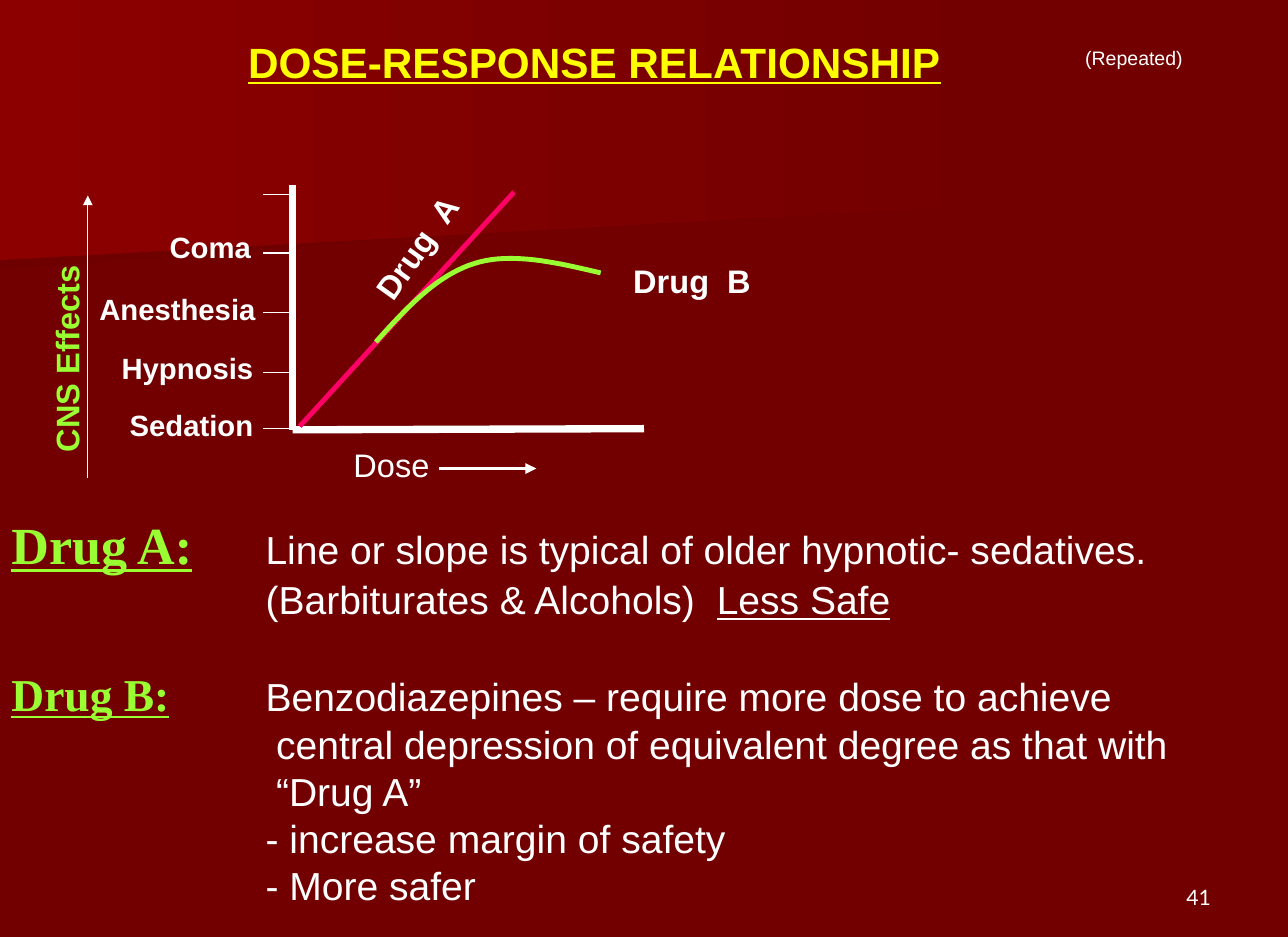
from dataclasses import dataclass

from lxml.etree import SubElement
from pptx import Presentation
from pptx.dml.color import RGBColor as Rgb
from pptx.enum.shapes import MSO_CONNECTOR as Connector
from pptx.enum.text import MSO_ANCHOR as Anchor, PP_ALIGN as Align
from pptx.oxml.ns import qn
from pptx.util import Emu, Pt

PX = 9144  # EMU per px, 100 px to the inch


@dataclass(frozen=True)
class Theme:
    background: str = "720000"
    glow: str = "8C0000"
    shade: str = "6F0000"
    white: str = "FFFFFF"
    yellow: str = "FFFF00"
    green: str = "99FF33"
    pink: str = "FF0066"
    sans: str = "Arial"
    serif: str = "Times New Roman"
    number_font: str = "Lato"
    title: int = 26
    body: int = 24
    label: int = 20
    level: int = 18
    number: int = 13
    remark: int = 12


THEME = Theme()


def px(value):
    return Emu(round(value * PX))


def set_font(font, size, color=THEME.white, bold=False, underline=False, name=THEME.sans):
    font.name, font.size = name, Pt(size)
    font.bold, font.underline = bold, underline
    font.color.rgb = Rgb.from_string(color)


def add_frame(slide, left, top, width, height, wrap=False):
    box = slide.shapes.add_textbox(px(left), px(top), px(width), px(height))
    box.text_frame.word_wrap = wrap
    return box


def add_label(slide, text, box, size, rotation=0, align=Align.LEFT,
              anchor=Anchor.TOP, **style):
    label = add_frame(slide, *box)
    label.rotation = rotation
    label.text_frame.vertical_anchor = anchor
    paragraph = label.text_frame.paragraphs[0]
    paragraph.text, paragraph.alignment = text, align
    set_font(paragraph.font, size, **style)


def add_line(slide, start, end, width, color=THEME.white, arrow=False):
    line = slide.shapes.add_connector(Connector.STRAIGHT, *map(px, start + end))
    line.line.width = Pt(width)
    line.line.color.rgb = Rgb.from_string(color)
    properties = line._element.spPr
    if arrow:
        SubElement(properties.find(qn("a:ln")), qn("a:tailEnd"), type="triangle")
    SubElement(properties, qn("a:effectLst"))


def add_outline(slide, points, close):
    start, *rest = [(px(x), px(y)) for x, y in points]
    builder = slide.shapes.build_freeform(*start)
    builder.add_line_segments(rest, close=close)
    outline = builder.convert_to_shape()
    outline.shadow.inherit = False
    return outline


def add_band(slide, points, color):
    band = add_outline(slide, points, close=True)
    band.line.fill.background()
    band.fill.gradient()
    band.fill.gradient_angle = 0
    for stop, tone in zip(band.fill.gradient_stops, (color, THEME.background)):
        stop.color.rgb = Rgb.from_string(tone)


def bezier(p0, p1, p2, p3, steps=20):
    for t in (step / steps for step in range(steps + 1)):
        yield tuple((1 - t) ** 3 * a + 3 * (1 - t) ** 2 * t * b
                    + 3 * (1 - t) * t ** 2 * c + t ** 3 * d
                    for a, b, c, d in zip(p0, p1, p2, p3))


def add_curve(slide, spans, color, width):
    points = [point for span in spans for point in bezier(*span)]
    curve = add_outline(slide, points, close=False)
    curve.fill.background()
    curve.line.color.rgb = Rgb.from_string(color)
    curve.line.width = Pt(width)


def add_notes(slide, box, notes, hang):
    """Each note: heading, heading size, lines of (indent, text, underlined text)."""
    frame = add_frame(slide, *box, wrap=True).text_frame
    paragraph = frame.paragraphs[0]
    for number, (heading, heading_size, lines) in enumerate(notes):
        for row, (indent, text, underlined) in enumerate(lines):
            if number or row:
                paragraph = frame.add_paragraph()
            properties = paragraph._p.get_or_add_pPr()
            properties.set("marL", str(px(hang + indent)))
            properties.set("indent", str(0 if row else -px(hang)))
            if row == 0:
                paragraph.space_before = Pt(27 if number else 0)
                run = paragraph.add_run()
                run.text = heading
                set_font(run.font, heading_size, THEME.green, True, True, THEME.serif)
                text = "\t" + text
            for part, underline in ((text, False), (underlined, True)):
                if part:
                    run = paragraph.add_run()
                    run.text = part
                    set_font(run.font, THEME.body, underline=underline)


def add_chart_area(slide):
    # Axes and ticks
    add_line(slide, (250, 158), (250, 367), 4.5)
    add_line(slide, (550, 366), (250, 367), 4.5)
    for y in (166, 216, 267, 318, 366):
        add_line(slide, (252, y), (225, y), 0.75)

    # Effect levels
    for text, left, top, width in (("Coma", 135, 191, 100), ("Anesthesia", 75, 244, 175),
                                   ("Hypnosis", 94, 294, 150), ("Sedation", 101, 343, 150)):
        add_label(slide, text, (left, top, width, 40), THEME.level, bold=True)

    # Drug responses
    add_line(slide, (256, 364), (439, 164), 3, THEME.pink)
    add_curve(slide, [((321, 292), (347, 263), (373, 235), (405, 225)),
                      ((405, 225), (436, 215), (475, 224), (513, 233))], THEME.green, 3)
    add_label(slide, "Drug  B", (531, 218, 150, 43), THEME.label, bold=True)
    add_label(slide, "Drug  A", (294, 186, 128, 43), THEME.label, 305.4, bold=True)

    # Axis titles
    add_line(slide, (75, 408), (75, 167), 0.75, arrow=True)
    add_label(slide, "CNS Effects", (-33, 285, 179, 43), THEME.label, 270,
              color=THEME.green, bold=True)
    add_label(slide, "Dose", (292, 375, 85, 43), THEME.label)
    add_line(slide, (375, 400), (458, 400), 2.25, arrow=True)


def main():
    deck = Presentation()
    deck.slide_width, deck.slide_height = px(1100), px(800)
    slide = deck.slides.add_slide(deck.slide_layouts[6])

    # Background
    slide.background.fill.solid()
    slide.background.fill.fore_color.rgb = Rgb.from_string(THEME.background)
    add_band(slide, [(856, 163), (0, 231), (0, 108), (857, 108)], THEME.shade)
    add_band(slide, [(871, 173), (0, 222), (0, 0), (871, 0)], THEME.glow)

    # Title, remark and page number
    add_label(slide, "DOSE-RESPONSE RELATIONSHIP", (202, 26, 640, 53), THEME.title,
              color=THEME.yellow, bold=True, underline=True)
    add_label(slide, "(Repeated)", (917, 34, 183, 30), THEME.remark)
    add_label(slide, "41", (787, 729, 257, 53), THEME.number, align=Align.RIGHT,
              anchor=Anchor.BOTTOM, name=THEME.number_font)

    add_chart_area(slide)

    # Explanations
    add_notes(slide, (0, 433, 1100, 346), [
        ("Drug A:", 32, [
            (0, "Line or slope is typical of older hypnotic- sedatives.", ""),
            (0, "(Barbiturates & Alcohols)  ", "Less Safe")]),
        ("Drug B:", 28, [
            (0, "Benzodiazepines – require more dose to achieve", ""),
            (9, "central depression of equivalent degree as that with", ""),
            (9, "“Drug A”", ""),
            (0, "- increase margin of safety", ""),
            (0, "- More safer", "")]),
    ], hang=217)

    deck.save("out.pptx")


if __name__ == "__main__":
    main()
